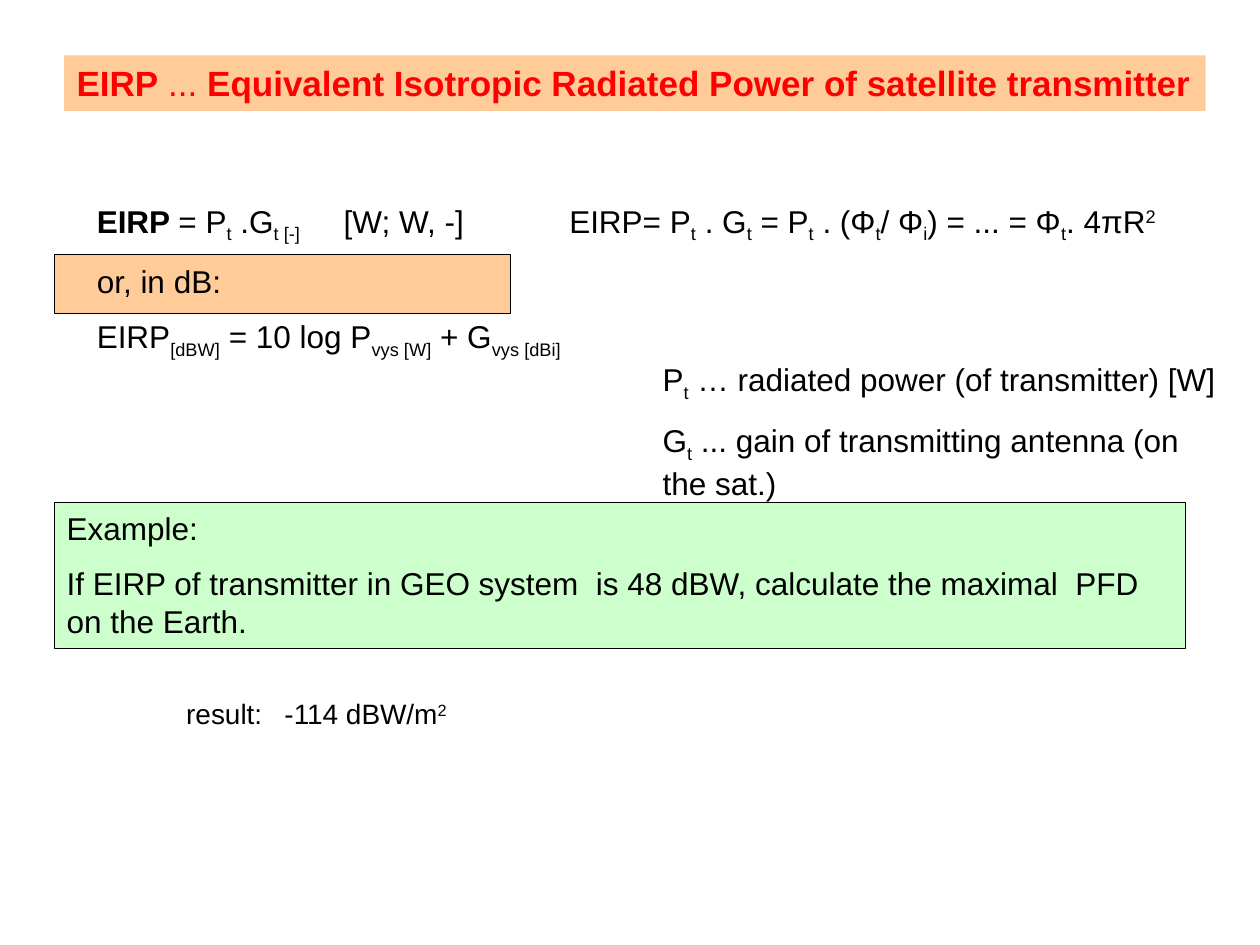
from lxml import etree
from pptx import Presentation
from pptx.dml.color import RGBColor
from pptx.enum.shapes import MSO_SHAPE
from pptx.enum.text import MSO_ANCHOR, PP_ALIGN
from pptx.oxml.ns import qn
from pptx.util import Inches, Pt

RECTANGLE = MSO_SHAPE.RECTANGLE
TOP = MSO_ANCHOR.TOP
LEFT = PP_ALIGN.LEFT
ORANGE, GREEN, BLACK, RED = "FFCC99", "CCFFCC", "000000", "FF0000"
BASELINES = {"_": "-25000", "^": "30000"}


def color(value):
    return RGBColor.from_string(value)


def add_box(place, lines, size=18, ink=BLACK, fill=None, outline=None, tabs=()):
    """Add a box; in lines, | parts the runs, led by * bold, _ subscript or ^ superscript."""
    place = [Inches(length) for length in place]
    if fill:
        box = page.shapes.add_shape(RECTANGLE, *place)
        box.shadow.inherit = False
        box.fill.solid()
        box.fill.fore_color.rgb = color(fill)
        if outline:
            box.line.color.rgb = color(outline)
            box.line.width = Pt(0.75)
        else:
            box.line.fill.background()
    else:
        box = page.shapes.add_textbox(*place)

    frame = box.text_frame
    frame.word_wrap = True
    frame.vertical_anchor = TOP
    for index, line in enumerate(lines):
        para = frame.add_paragraph() if index else frame.paragraphs[0]
        para.alignment = LEFT
        para.space_before = Pt(size / 2 + 1)
        if "\t" in line:
            stops = etree.SubElement(para._p.get_or_add_pPr(), qn("a:tabLst"))
            for tab in tabs:
                etree.SubElement(stops, qn("a:tab"), pos=str(Inches(tab)), algn="l")
        for part in line.split("|"):
            mark = part[0] if part[0] in "*_^" else ""
            span = para.add_run()
            span.text = part[len(mark):]
            span.font.name = "Arial"
            span.font.size = Pt(size)
            span.font.bold = mark == "*"
            span.font.color.rgb = color(ink)
            if mark in BASELINES:
                span._r.get_or_add_rPr().set("baseline", BASELINES[mark])


deck = Presentation()
deck.slide_width, deck.slide_height = Inches(10), Inches(7.5)
page = deck.slides.add_slide(deck.slide_layouts[6])

# Highlight behind the decibel formula
add_box((0.43, 2.02, 3.62, 0.47), [], fill=ORANGE, outline=BLACK)

# Formulas
add_box((0.67, 1.55, 9.17, 1.81), [
    "*EIRP |= P|_t| .G|_t [-]|\t[W; W, -]\tEIRP= P|_t| . G|_t| = P|_t"
    "| . (Φ|_t|/ Φ|_i|) = ... = Φ|_t|. 4πR|^2",
    "or, in dB:",
    "EIRP|_[dBW]| = 10 log P|_vys [W]| + G|_vys [dBi]",
], tabs=(1.96, 3.75))

# Example
add_box((0.43, 3.99, 8.98, 1.16), [
    "Example:",
    "If EIRP of transmitter in GEO system  is 48 dBW, calculate the maximal  PFD on the Earth.",
], fill=GREEN, outline=BLACK)

# Symbols
add_box((5.16, 2.81, 4.68, 1.16), [
    "P|_t| … radiated power (of transmitter) [W]",
    "G|_t| ... gain of transmitting antenna (on the sat.)",
])

# Title
add_box((0.51, 0.44, 9.06, 0.44), [
    "*EIRP| ... |*Equivalent Isotropic Radiated Power of satellite transmitter",
], size=20, ink=RED, fill=ORANGE)

# Result
add_box((1.38, 5.48, 6.06, 0.37), ["result:\t-114 dBW/m|^2"], size=16, tabs=(0.78,))

deck.save("out.pptx")
